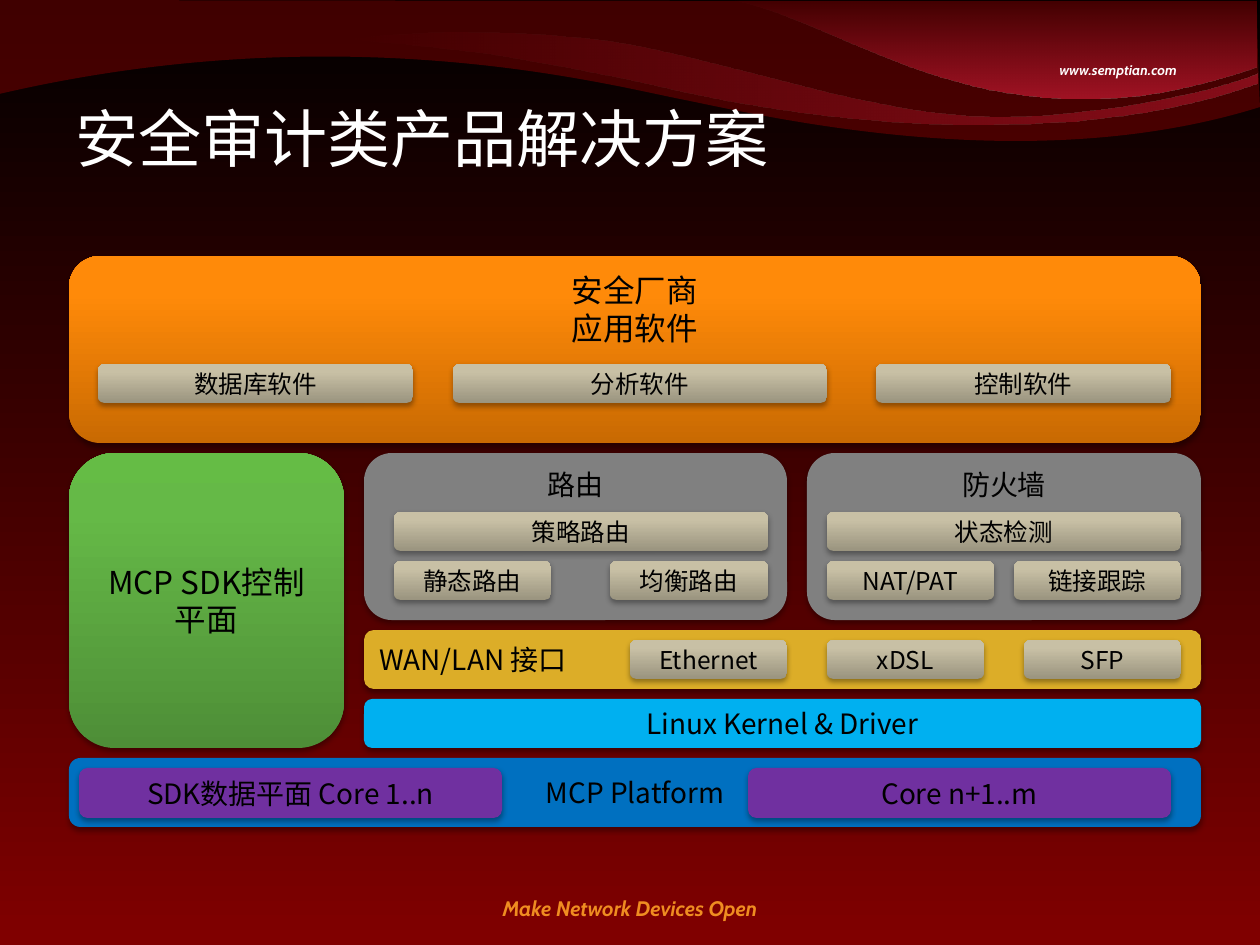
from lxml.etree import SubElement
from pptx import Presentation
from pptx.dml.color import RGBColor
from pptx.enum.shapes import MSO_SHAPE
from pptx.enum.text import MSO_ANCHOR, MSO_AUTO_SIZE, PP_ALIGN
from pptx.oxml.ns import qn
from pptx.util import Pt

SCALE = 914400 / 126
SANS = "Noto Sans CJK SC"
CHIP = [(0, "9A947F"), (80, "C8C0A5"), (100, "C9C2A5")]
ORANGE = [(0, "C96A02"), (80, "FF8A09"), (100, "FF8A0A")]
GREEN = [(0, "4E8E37"), (80, "65B947"), (100, "65BC45")]

# A start point, then two control points and an end point for each curve.
WAVE = [(-1, 94), (339, 15), (600, 83), (680, 99), (761, 115), (1027, 180), (1260, 107),
        (1260, 107), (1257, 43), (1257, 1), (626, 1), (-1, 0), (-1, 0),
        (-1, 34), (-1, 62), (-1, 94)]
RIBBON = [(491, 54), (590, 71), (640, 81), (682, 91), (722, 100), (1028, 166), (1257, 83),
          (1257, 83), (1257, 86), (1257, 73), (1211, 92), (1077, 121), (968, 115),
          (858, 110), (703, 53), (600, 40), (495, 28), (402, 32), (344, 39),
          (345, 40), (402, 42), (491, 54)]
SHEEN = [(1257, -1), (1257, 34), (1257, 67), (1257, 67), (993, 160), (854, 23), (727, -1),
         (727, -1), (993, -1), (1257, -1)]


def px(num):
    return round(num * SCALE)


def rgb(code):
    return RGBColor.from_string(code)


def tint(node, code, alpha=100):
    """Add a colour, with its opacity in percent, under an XML node."""
    clr = SubElement(node, qn("a:srgbClr"), val=code)
    if alpha < 100:
        SubElement(clr, qn("a:alpha"), val=str(alpha * 1000))


def blend(fill, root, stops, angle):
    """Fill with (percent, colour[, opacity]) stops; the angle runs clockwise."""
    fill.gradient()
    grad = root.find(".//" + qn("a:gradFill"))
    for child in list(grad):
        grad.remove(child)
    group = SubElement(grad, qn("a:gsLst"))
    for spot, *color in stops:
        tint(SubElement(group, qn("a:gs"), pos=str(spot * 1000)), *color)
    SubElement(grad, qn("a:lin"), ang=str(angle * 60000), scaled="0")


def write(frame, lines, size, color="000000", font=SANS, align=PP_ALIGN.CENTER,
          anchor=MSO_ANCHOR.MIDDLE, strong=False, wrap=True):
    frame.word_wrap = wrap
    frame.auto_size = MSO_AUTO_SIZE.NONE
    frame.vertical_anchor = anchor
    for num, line in enumerate(lines):
        para = frame.add_paragraph() if num else frame.paragraphs[0]
        para.alignment = align
        run = para.add_run()
        run.text = line
        face = run.font
        face.name, face.size, face.color.rgb = font, Pt(size), rgb(color)
        face.bold = face.italic = strong
        SubElement(run._r.get_or_add_rPr(), qn("a:ea"), typeface=font)


def curve(slide, points):
    """Draw a closed outline, turning each three segments into one cubic curve."""
    pen = slide.shapes.build_freeform(*points[0], scale=SCALE)
    pen.add_line_segments(points[1:], close=True)
    shape = pen.convert_to_shape()
    route = shape._element.find(".//" + qn("a:path"))
    lines = route.findall(qn("a:lnTo"))
    close = route.find(qn("a:close"))
    route.remove(close)
    for num in range(0, len(points) - 1, 3):
        cubic = SubElement(route, qn("a:cubicBezTo"))
        for line in lines[num:num + 3]:
            cubic.append(line[0])
            route.remove(line)
    route.append(close)
    shape.shadow.inherit = False
    shape.line.fill.background()
    return shape


def block(slide, box, fill, lines, size=16, **style):
    """Add a rounded block; fill is a colour or a list of gradient stops."""
    shape = slide.shapes.add_shape(MSO_SHAPE.ROUNDED_RECTANGLE, *map(px, box))
    shape.line.fill.background()
    root = shape._element.spPr
    if isinstance(fill, str):
        shape.fill.solid()
        shape.fill.fore_color.rgb = rgb(fill)
    else:
        blend(shape.fill, root, fill, 270)
    shape.shadow.inherit = False
    shade = SubElement(root.find(qn("a:effectLst")), qn("a:outerShdw"), blurRad="40000",
                       dist="23000", dir="5400000", rotWithShape="0")
    tint(shade, "000000", 35)
    write(shape.text_frame, lines, size, **style)


def chips(slide, top, *items):
    for left, width, text in items:
        block(slide, (left, top, width, 39), CHIP, [text], 14)


def label(slide, box, text, size, color, **style):
    frame = slide.shapes.add_textbox(*map(px, box)).text_frame
    write(frame, [text], size, color, "Cabin", anchor=MSO_ANCHOR.TOP, strong=True, **style)


def backdrop(slide):
    back = slide.background
    blend(back.fill, slide._element.cSld, [(0, "000000"), (100, "800000")], 90)
    wave = curve(slide, WAVE)
    wave.fill.solid()
    wave.fill.fore_color.rgb = rgb("800000")
    color = wave._element.spPr.find(qn("a:solidFill"))[0]
    SubElement(color, qn("a:alpha"), val="50000")
    for points, alpha, angle in ((RIBBON, 50, 0), (SHEEN, 70, 90)):
        shape = curve(slide, points)
        stops = [(0, "CA1C35", 0), (100, "CA1C35", alpha)]
        blend(shape.fill, shape._element.spPr, stops, angle)
    label(slide, (0, 889, 1260, 38), "Make Network Devices Open", 12, "EF8D21")
    label(slide, (1047, 55, 144, 29), "www.semptian.com", 8, "FFFFFF",
          align=PP_ALIGN.LEFT, wrap=False)


def heading(slide, text):
    title = slide.shapes.title
    title.left, title.top, title.width, title.height = map(px, (63, 69, 955, 136))
    write(title.text_frame, [text], 36, "FFFFFF", align=PP_ALIGN.LEFT)
    slide.shapes._spTree.append(title._element)


def stack(slide):
    """Lay out the layers of the software stack."""
    top = MSO_ANCHOR.TOP
    block(slide, (69, 758, 1132, 69), "0070C0", ["MCP Platform"])
    block(slide, (364, 699, 837, 49), "00B0F0", ["Linux Kernel & Driver"])
    block(slide, (364, 630, 837, 59), "DCAD28", ["WAN/LAN 接口"], align=PP_ALIGN.JUSTIFY)
    ports = enumerate(("Ethernet", "xDSL", "SFP"))
    chips(slide, 640, *((630 + 197 * num, 157, text) for num, text in ports))

    block(slide, (364, 453, 423, 167), "808080", ["路由"], anchor=top)
    chips(slide, 561, (394, 157, "静态路由"))
    chips(slide, 512, (394, 374, "策略路由"))
    chips(slide, 561, (610, 158, "均衡路由"))
    block(slide, (807, 453, 394, 167), "808080", ["防火墙"], anchor=top)
    chips(slide, 512, (827, 354, "状态检测"))
    chips(slide, 561, (827, 167, "NAT/PAT"), (1014, 167, "链接跟踪"))

    core = "7030A0"
    block(slide, (79, 768, 423, 50), core, ["SDK数据平面 Core 1..n"])
    block(slide, (69, 256, 1132, 187), ORANGE, ["安全厂商", "应用软件"], 18, anchor=top)
    block(slide, (69, 453, 275, 295), GREEN, ["MCP SDK控制平面"], 18)
    block(slide, (748, 768, 423, 50), core, ["Core n+1..m"])
    chips(slide, 364, (98, 315, "数据库软件"), (453, 374, "分析软件"), (876, 295, "控制软件"))


def main():
    deck = Presentation()
    deck.slide_width, deck.slide_height = px(1260), px(945)
    slide = deck.slides.add_slide(deck.slide_layouts[5])
    backdrop(slide)
    heading(slide, "安全审计类产品解决方案")
    stack(slide)
    deck.save("out.pptx")


if __name__ == "__main__":
    main()
